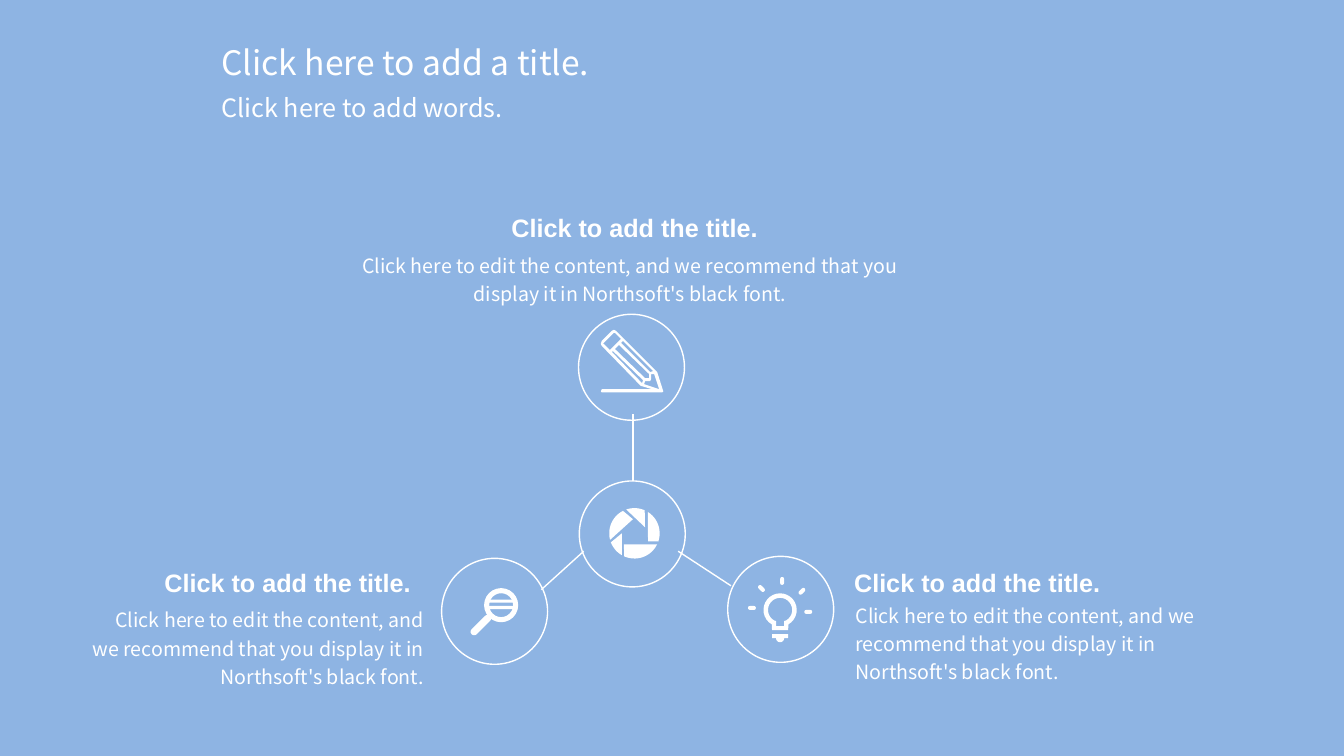
from math import cos, radians, sin

from lxml.etree import SubElement
from pptx import Presentation
from pptx.dml.color import RGBColor
from pptx.enum.shapes import MSO_CONNECTOR as Link, MSO_SHAPE as Kind
from pptx.enum.text import MSO_AUTO_SIZE as Fit, PP_ALIGN as Align
from pptx.oxml.ns import qn
from pptx.util import Cm, Pt

SKY = RGBColor(0x8E, 0xB4, 0xE3)
WHITE = RGBColor(0xFF, 0xFF, 0xFF)
SANS = "Noto Sans CJK SC"

LARGE = {"name": SANS, "size": Pt(24)}
MEDIUM = {"name": SANS, "size": Pt(18)}
STRONG = {"name": "Arial", "size": Pt(18), "bold": True}
SMALL = {"name": SANS, "size": Pt(14)}

GROW = {"word_wrap": True, "auto_size": Fit.SHAPE_TO_FIT_TEXT}
TIGHT = {"word_wrap": True, "margin_left": 0, "margin_top": 0,
         "margin_right": 0, "margin_bottom": 0}

HEAD = "Click to add the title."
BODY = ("Click here to edit the content, and we recommend that you "
        "display it in Northsoft's black font.")
DISC = 2.67

# Outlines on a grid of hundredths of an inch
PENCIL = [
    [(62, 61), (56, 42), (55, 41), (15, 1), (13, 0), (11, 1), (1, 11), (0, 14),
     (1, 16), (40, 56), (41, 56), (51, 59), (1, 59), (0, 61), (1, 62), (61, 62)],
    [(58, 59), (43, 54), (44, 51), (49, 51), (50, 49), (50, 44), (53, 44)],
    [(22, 11), (52, 41), (49, 42), (20, 13)],
    [(18, 15), (48, 44), (48, 48), (44, 48), (14, 19)],
    [(2, 14), (3, 13), (13, 3), (14, 3), (20, 9), (9, 20), (3, 14)],
    [(12, 21), (42, 50), (41, 53), (11, 22)],
]


def arc(radius, start, end, drop=0):
    """Points of an arc, clockwise in degrees, centred drop below zero."""
    steps = 24
    turns = [radians(start + (end - start) * i / steps) for i in range(steps + 1)]
    return [(radius * cos(t), drop + radius * sin(t)) for t in turns]


def style(item, values):
    for name, value in values.items():
        setattr(item, name, value)


def write(shapes, words, box, font, frame=GROW, **para):
    text = shapes.add_textbox(*map(Cm, box)).text_frame
    style(text, frame)
    line = text.paragraphs[0]
    style(line, para)
    run = line.add_run()
    run.text = words
    style(run.font, font)
    run.font.color.rgb = WHITE


def paint(shape):
    shape.shadow.inherit = False
    shape.fill.solid()
    shape.fill.fore_color.rgb = WHITE
    shape.line.fill.background()


def solid(shapes, kind, x, y, wide, high, turn=0):
    """Add a white preset shape centred on x, y."""
    shape = shapes.add_shape(kind, Cm(x - wide / 2), Cm(y - high / 2),
                             Cm(wide), Cm(high))
    shape.rotation = turn
    paint(shape)
    return shape


def pill(shapes, x, y, wide, high, turn=0):
    shape = solid(shapes, Kind.ROUNDED_RECTANGLE, x, y, wide, high, turn)
    shape.adjustments[0] = 0.5


def trace(shapes, x, y, paths):
    """Fill closed grid paths as one outline with its zero at x, y."""
    fine = [[(a * 100, b * 100) for a, b in path] for path in paths]
    pen = shapes.build_freeform(*fine[0][0], scale=Cm(2.54) / 10000)
    for i, path in enumerate(fine):
        if i:
            pen.move_to(*path[0])
        pen.add_line_segments(path[1:], close=True)
    paint(pen.convert_to_shape(Cm(x), Cm(y)))


def ring(shapes, x, y):
    disc = shapes.add_shape(Kind.OVAL, *map(Cm, (x, y, DISC, DISC)))
    disc.shadow.inherit = False
    disc.fill.background()
    disc.line.color.rgb = WHITE
    disc.line.width = Pt(1)


def spoke(shapes, ends):
    line = shapes.add_connector(Link.STRAIGHT, *map(Cm, ends))
    line.line.color.rgb = WHITE
    line.line.width = Pt(1)
    SubElement(line._element.spPr, qn("a:effectLst"))


def lens(shapes, x, y):
    rim = solid(shapes, Kind.DONUT, x, y, 0.86, 0.86)
    rim.adjustments[0] = 0.15
    pill(shapes, x - 0.51, y + 0.5, 0.66, 0.18, -45)
    for drop in (-0.1, 0.06):
        solid(shapes, Kind.RECTANGLE, x, y + drop, 0.61, 0.08)


def shutter(shapes, x, y):
    blades = [(26, 114, (-10.5, 11)), (-66, -109, (10.5, -6)),
              (-117, -195, (-1.5, -14)), (120, 159, (-12.5, 0)),
              (-58, 19, (13.5, 8))]
    trace(shapes, x, y, [arc(25, start, end) + [tip] for start, end, tip in blades])


def bulb(shapes, x, y):
    rays = [(-0.47, -0.54, 45), (-0.71, -0.05, 0), (0.71, 0.05, 0),
            (0.55, -0.47, -45), (0.05, -0.73, 90)]
    for right, drop, turn in rays:
        pill(shapes, x + right, y + drop, 0.2, 0.1, turn)
    glass = arc(16.5, 120, 420) + [(8, 20), (-8, 20)]
    hollow = arc(12, 120, 420) + [(4, 11), (4, 16), (-4, 16), (-4, 11)]
    trace(shapes, x, y, [glass, hollow])
    base = [(-8, 24), (8, 24), (8, 28)] + arc(4, 0, 180, 28) + [(-8, 28)]
    trace(shapes, x, y, [base])


def main():
    deck = Presentation()
    deck.slide_width, deck.slide_height = Cm(33.87), Cm(19.05)
    slide = deck.slides.add_slide(deck.slide_layouts[6])
    slide.background.fill.solid()
    slide.background.fill.fore_color.rgb = SKY
    shapes = slide.shapes

    write(shapes, "Click here to add a title.", (5.33, 0.94, 10.08, 1.27),
          LARGE, alignment=Align.JUSTIFY)
    write(shapes, "Click here to add words.", (5.33, 2.21, 10.08, 1.02), MEDIUM)

    for ends in [(15.95, 10.44, 15.95, 12.12), (17.09, 13.89, 18.42, 14.76),
                 (14.71, 13.89, 13.64, 14.86)]:
        spoke(shapes, ends)
    for spot in [(14.6, 12.12), (14.58, 7.92), (11.13, 14.07), (18.34, 14.02)]:
        ring(shapes, *spot)

    trace(shapes, 15.14, 8.31, PENCIL)
    lens(shapes, 12.63, 15.25)
    shutter(shapes, 15.99, 13.44)
    bulb(shapes, 19.66, 15.37)

    topics = [
        ((11.84, 5.08, 8.31, 1.09), (8.97, 6.27, 13.82, 1.85), Align.CENTER),
        ((2.97, 14.02, 8.56, 1.09), (2.13, 15.21, 8.56, 1.85), Align.RIGHT),
        ((20.35, 14.02, 8.56, 1.09), (21.56, 15.09, 10.19, 1.85), Align.LEFT),
    ]
    for head, body, side in topics:
        write(shapes, HEAD, head, STRONG, alignment=Align.CENTER, line_spacing=1.2)
        write(shapes, BODY, body, SMALL, TIGHT, alignment=side,
              line_spacing=1.2, space_after=Pt(6))

    deck.save("out.pptx")


if __name__ == "__main__":
    main()
